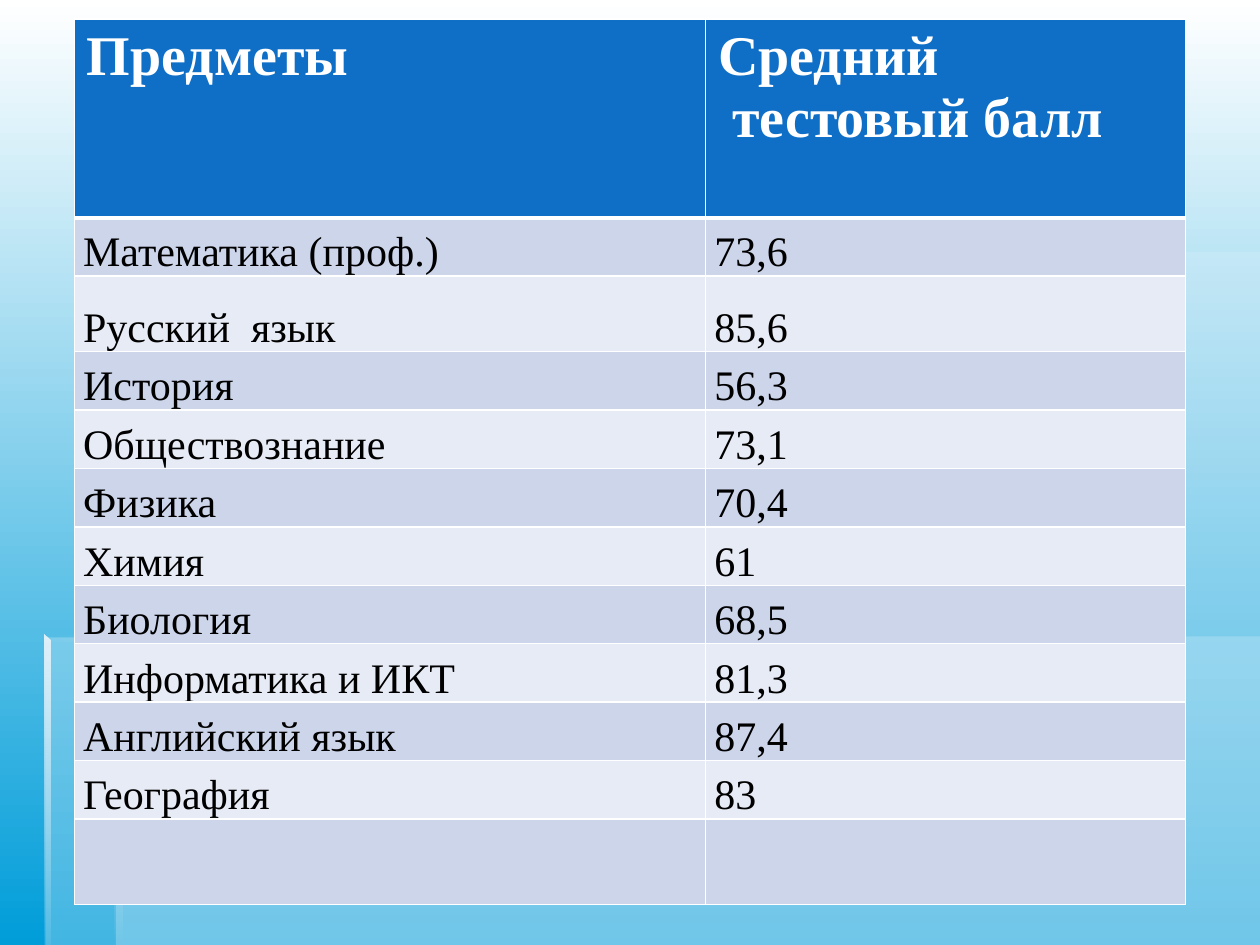
import pptx
import pptx.util
import pptx.dml.color
import pptx.enum.text
import pptx.oxml
import pptx.oxml.ns
import lxml.etree

Inches = pptx.util.Inches
Pt = pptx.util.Pt

THEME = {
    "font": "Times New Roman",
    "white": "FFFFFF",
    "black": "000000",
    "sky": "009DD9",
    "ice": "DBEFF9",
    "frost": "E0F1FA",
    "mist": "C9DBE4",
    "header": "0F6FC6",
    "bands": ("CCD5EA", "E7EBF5"),
    "header_size": 32,
    "body_size": 24,
}


def paint(fill, element, stops, angle=0):
    if len(stops) == 1:
        fill.solid()
        colors = [fill.fore_color]
    else:
        fill.gradient()
        fill.gradient_angle = (360 - angle) % 360
        colors = [stop.color for stop in fill.gradient_stops]
    for color, (name, _) in zip(colors, stops):
        color.rgb = pptx.dml.color.RGBColor.from_string(THEME[name])
    for node, (_, opacity) in zip(element.iter(pptx.oxml.ns.qn("a:srgbClr")), stops):
        if opacity < 100:
            alpha = lxml.etree.SubElement(node, pptx.oxml.ns.qn("a:alpha"))
            alpha.set("val", str(opacity * 1000))


def add_border(cell, side, width):
    properties = cell._tc.get_or_add_tcPr()
    line = pptx.oxml.parse_xml(
        f'<a:{side} {pptx.oxml.ns.nsdecls("a")} w="{Pt(width)}"><a:solidFill>'
        f'<a:srgbClr val="{THEME["white"]}"/></a:solidFill></a:{side}>'
    )
    properties.append(line)


deck = pptx.Presentation()
deck.slide_width = Inches(10)
deck.slide_height = Inches(7.5)
page = deck.slides.add_slide(deck.slide_layouts[6])
background = page.background.fill
paint(background, page._element, [("white", 100), ("sky", 100)], 90)

panels = [
    ([(0.92, 5.05), (0.92, 7.5), (10, 7.5), (10, 5.05)], [("ice", 30)], 0),
    ([(0.94, 5.06), (0.36, 5.06), (0.36, 7.5), (10, 7.5), (10, 2), (0.94, 2)], [("ice", 30)], 0),
    ([(0.92, 2), (0.92, 2.05), (8.91, 2.05), (8.91, 2)], [("ice", 0), ("mist", 100)], 0),
    ([(0.92, 2), (0.92, 5.1), (0.97, 5.1), (0.96, 2.04)], [("frost", 100), ("ice", 100)], 90),
    ([(0.91, 7.5), (0.97, 7.5), (0.96, 5.08), (0.91, 5.04)], [("frost", 100), ("ice", 0)], 90),
    ([(0.35, 5.04), (0.35, 5.09), (5.35, 5.09), (5.35, 5.04)], [("ice", 0), ("mist", 100)], 0),
    ([(0.35, 5.04), (0.35, 7.5), (0.4, 7.5), (0.4, 5.09)], [("frost", 100), ("ice", 10)], 90),
]
for corners, stops, angle in panels:
    points = [(Inches(x), Inches(y)) for x, y in corners]
    builder = page.shapes.build_freeform(*points[0])
    builder.add_line_segments(points[1:], close=True)
    panel = builder.convert_to_shape()
    panel.shadow.inherit = False
    panel.line.fill.background()
    paint(panel.fill, panel._element.spPr, stops, angle)

rows = [
    ("Предметы", "Средний\n тестовый балл"),
    ("Математика (проф.)", "73,6"),
    ("Русский  язык", "85,6"),
    ("История", "56,3"),
    ("Обществознание", "73,1"),
    ("Физика", "70,4"),
    ("Химия", "61"),
    ("Биология", "68,5"),
    ("Информатика и ИКТ", "81,3"),
    ("Английский язык", "87,4"),
    ("География", "83"),
    ("", ""),
]
widths = [5.01, 3.81]
heights = [1.58, 0.46, 0.6] + [0.464] * 8 + [0.68]
frame = page.shapes.add_table(
    len(rows), len(widths), Inches(0.59), Inches(0.15), Inches(sum(widths)), Inches(sum(heights))
)
table = frame.table
for column, width in zip(table.columns, widths):
    column.width = Inches(width)
for row, height in zip(table.rows, heights):
    row.height = Inches(height)

body_cell = {
    "vertical_anchor": pptx.enum.text.MSO_ANCHOR.BOTTOM,
    "margin_left": Inches(0.07),
    "margin_right": Inches(0.07),
    "margin_top": 0,
    "margin_bottom": 0,
}
body_para = {"line_spacing": 1.15, "space_after": Pt(10)}
for row_index, texts in enumerate(rows):
    is_header = row_index == 0
    font_format = {
        "name": THEME["font"],
        "size": Pt(THEME["header_size"] if is_header else THEME["body_size"]),
        "bold": is_header,
    }
    text_color = THEME["white"] if is_header else THEME["black"]
    cell_color = THEME["header"] if is_header else THEME["bands"][(row_index - 1) % 2]
    for column_index, text in enumerate(texts):
        cell = table.cell(row_index, column_index)
        for side in ("lnL", "lnR", "lnT", "lnB"):
            heavy = (is_header and side == "lnB") or (row_index == 1 and side == "lnT")
            add_border(cell, side, 3 if heavy else 1)
        cell.fill.solid()
        cell.fill.fore_color.rgb = pptx.dml.color.RGBColor.from_string(cell_color)
        if not text:
            continue
        cell.text = text
        if not is_header:
            for name, value in body_cell.items():
                setattr(cell, name, value)
        for para in cell.text_frame.paragraphs:
            if not is_header:
                for name, value in body_para.items():
                    setattr(para, name, value)
            for span in para.runs:
                for name, value in font_format.items():
                    setattr(span.font, name, value)
                span.font.color.rgb = pptx.dml.color.RGBColor.from_string(text_color)

deck.save("out.pptx")
